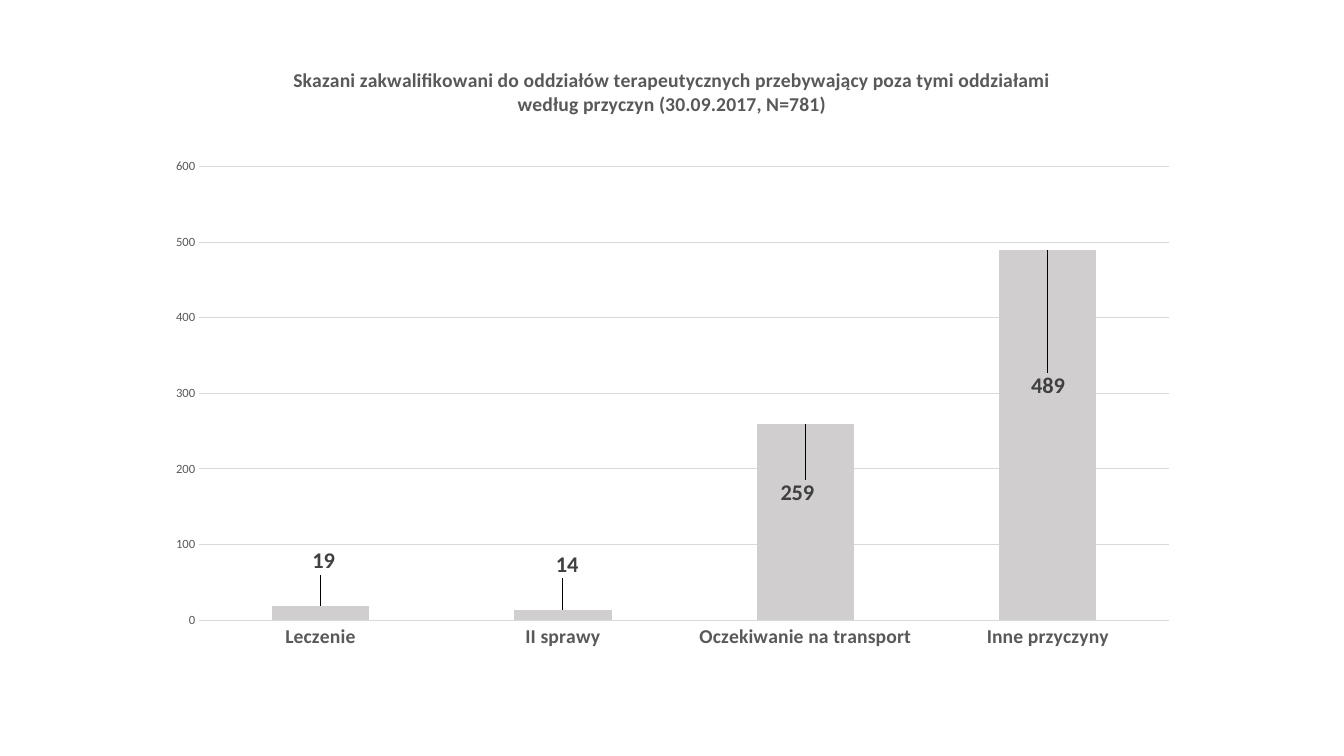
from lxml import etree
from pptx import Presentation
from pptx.chart.data import CategoryChartData
from pptx.dml.color import RGBColor
from pptx.enum.chart import XL_CHART_TYPE, XL_LABEL_POSITION, XL_TICK_MARK
from pptx.oxml.ns import qn
from pptx.util import Inches, Pt

COLUMN = XL_CHART_TYPE.COLUMN_CLUSTERED
OUTSIDE = XL_LABEL_POSITION.OUTSIDE_END
NO_TICK = XL_TICK_MARK.NONE
BLACK = RGBColor(0x00, 0x00, 0x00)
DARK = RGBColor(0x40, 0x40, 0x40)
GRAY = RGBColor(0x59, 0x59, 0x59)
GRID = RGBColor(0xD9, 0xD9, 0xD9)
BAR = RGBColor(0xD0, 0xCE, 0xCE)

TITLE = ("Skazani zakwalifikowani do oddziałów terapeutycznych przebywający "
         "poza tymi oddziałami według przyczyn (30.09.2017, N=781)")
CAUSES = [
    ("Leczenie", 19, 0.003, -0.04),
    ("II sprawy", 14, 0.004, -0.04),
    ("Oczekiwanie na transport", 259, -0.008, 0.13),
    ("Inne przyczyny", 489, 0, 0.23),
]


def style(font, size, color, bold):
    values = {"name": "Calibri", "size": Pt(size), "bold": bold}
    for key, value in values.items():
        setattr(font, key, value)
    font.color.rgb = color


def place(parent, index, values):
    for old in parent.findall(qn("c:layout")):
        parent.remove(old)
    layout = etree.Element(qn("c:layout"))
    manual = etree.SubElement(layout, qn("c:manualLayout"))
    for key, value in values.items():
        etree.SubElement(manual, qn(f"c:{key}")).set("val", str(value))
    parent.insert(index, layout)


deck = Presentation()
deck.slide_width = Inches(13.33)
deck.slide_height = Inches(7.5)
slide = deck.slides.add_slide(deck.slide_layouts[6])

data = CategoryChartData()
data.categories = [cause[0] for cause in CAUSES]
data.add_series("Series 1", [cause[1] for cause in CAUSES])
frame = slide.shapes.add_chart(
    COLUMN, Inches(1.58), Inches(0.44), Inches(10.17), Inches(6.62), data)
chart = frame.chart
style(chart.font, 10, BLACK, False)
chart.has_legend = False
chart.has_title = True
title = chart.chart_title
title.include_in_layout = False
title.text_frame.text = TITLE
style(title.text_frame.paragraphs[0].runs[0].font, 14, GRAY, True)

area = chart.element.find(".//" + qn("c:plotArea"))
place(area, 0, {
    "layoutTarget": "inner", "xMode": "edge", "yMode": "edge",
    "x": 0.039, "y": 0.183, "w": 0.946, "h": 0.68})

for axis, size, bold in [(chart.category_axis, 14, True),
                         (chart.value_axis, 9, False)]:
    axis.major_tick_mark = NO_TICK
    axis.minor_tick_mark = NO_TICK
    axis.format.line.fill.background()
    style(axis.tick_labels.font, size, GRAY, bold)

scale = chart.value_axis
for key, value in {"minimum_scale": 0, "maximum_scale": 600,
                   "major_unit": 100}.items():
    setattr(scale, key, value)
grid = scale.major_gridlines.format.line
grid.width = Pt(0.75)
grid.color.rgb = GRID

plot = chart.plots[0]
plot.gap_width = 150
plot.vary_by_categories = False
series = plot.series[0]
series.format.fill.solid()
series.format.fill.fore_color.rgb = BAR
labels = series.data_labels
labels.show_value = True
labels.position = OUTSIDE
style(labels.font, 16, DARK, True)

for index, (name, count, shift, drop) in enumerate(CAUSES):
    label = series.points[index].data_label
    label.position = OUTSIDE
    style(label.font, 16, DARK, True)
    node = labels._element.findall(qn("c:dLbl"))[index]
    place(node, 1, {"x": shift, "y": drop})

deck.save("out.pptx")
